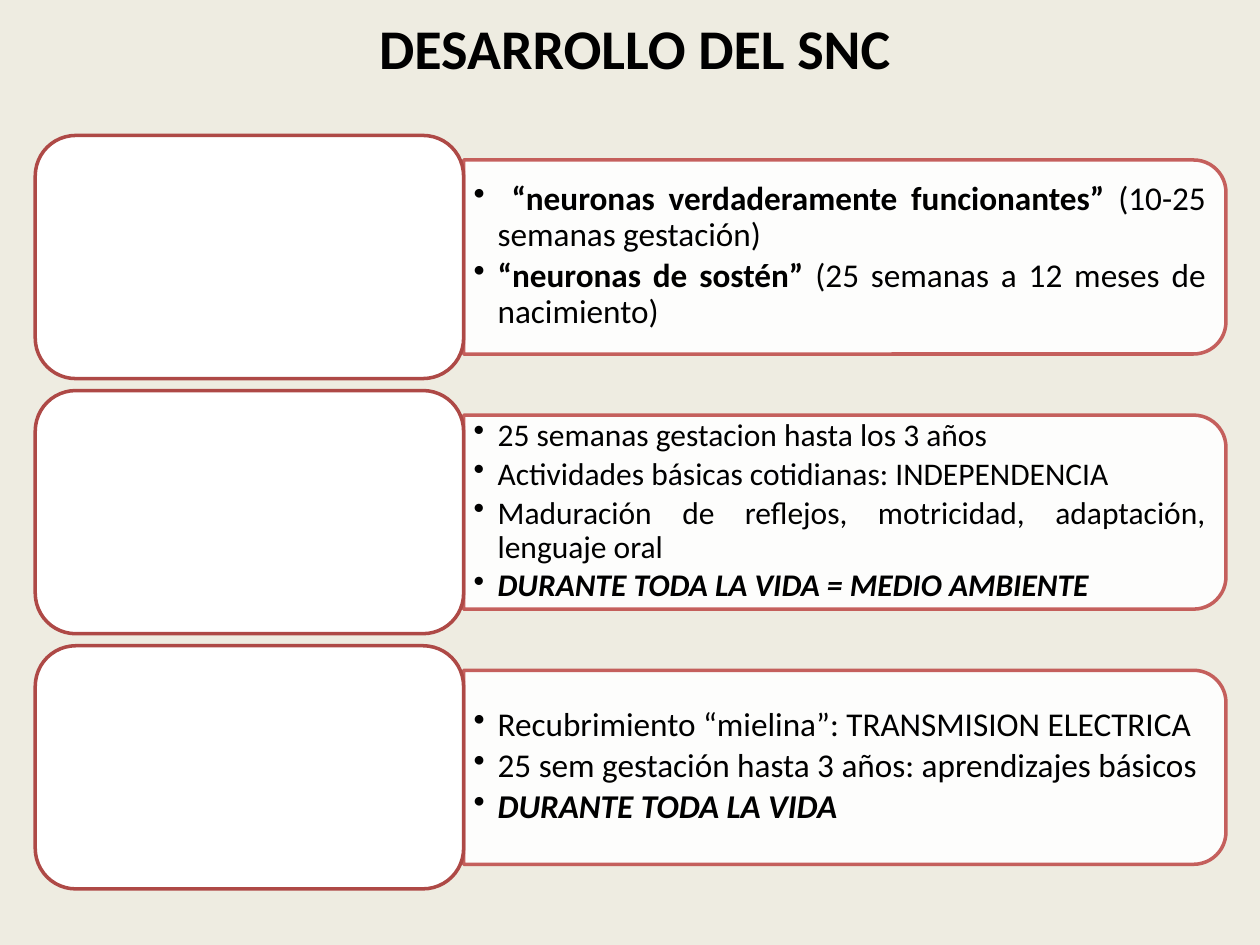
from lxml.etree import SubElement
from pptx import Presentation
from pptx.dml.color import RGBColor
from pptx.enum.shapes import MSO_SHAPE
from pptx.enum.text import MSO_ANCHOR, PP_ALIGN
from pptx.oxml.ns import qn
from pptx.util import Inches, Pt


def color(value):
    return RGBColor.from_string(value)


def add_box(kind, left, top, width, height, line_color, opacity=100):
    shape = slide.shapes.add_shape(kind, Inches(left), Inches(top), Inches(width), Inches(height))
    shape.shadow.inherit = False
    shape.fill.solid()
    shape.fill.fore_color.rgb = color("FFFFFF")
    shape.line.color.rgb = color(line_color)
    shape.line.width = Pt(2)
    if opacity < 100:
        for rgb in shape._element.spPr.iter(qn("a:srgbClr")):
            SubElement(rgb, qn("a:alpha"), val=str(opacity * 1000))
    return shape


stages = [
    (19, [
        [(" ", ""), ("“neuronas verdaderamente funcionantes”", "b"), (" (10-25 semanas gestación)", "")],
        [("“neuronas de sostén”", "b"), (" (25 semanas a 12 meses de nacimiento)", "")],
    ]),
    (18, [
        [("25 semanas gestacion hasta los 3 años", "")],
        [("Actividades básicas cotidianas: INDEPENDENCIA", "")],
        [("Maduración de reflejos, motricidad, adaptación, lenguaje oral", "")],
        [("DURANTE TODA LA VIDA = MEDIO AMBIENTE", "bi")],
    ]),
    (19, [
        [("Recubrimiento “mielina”: TRANSMISION ELECTRICA", "")],
        [("25 sem gestación hasta 3 años: aprendizajes básicos", "")],
        [("DURANTE TODA LA VIDA", "bi")],
    ]),
]

presentation = Presentation()
presentation.slide_width = Inches(10)
presentation.slide_height = Inches(7.5)
slide = presentation.slides.add_slide(presentation.slide_layouts[5])
slide.background.fill.solid()
slide.background.fill.fore_color.rgb = color("EEECE1")

title = slide.shapes.title
title.left, title.top = Inches(0.67), Inches(0.05)
title.width, title.height = Inches(8.74), Inches(0.64)
title.text_frame.text = "DESARROLLO DEL SNC"
title.text_frame.vertical_anchor = MSO_ANCHOR.MIDDLE
paragraph = title.text_frame.paragraphs[0]
paragraph.alignment = PP_ALIGN.CENTER
paragraph.font.name = "Calibri"
paragraph.font.size = Pt(32)
paragraph.font.bold = True
paragraph.font.color.rgb = color("000000")

card_left, card_width, card_height = 0.28, 3.4, 1.93
panel_left, panel_width, panel_height = card_left + card_width, 6.05, 1.54
first_middle, row_step = 2.04, 2.025

for row, (size, items) in enumerate(stages):
    middle = first_middle + row * row_step

    panel = add_box(MSO_SHAPE.ROUND_2_SAME_RECTANGLE,
                    panel_left + (panel_width - panel_height) / 2, middle - panel_width / 2,
                    panel_height, panel_width, "C0504D", 90)
    panel.rotation = 90

    text_box = slide.shapes.add_textbox(Inches(panel_left), Inches(middle - 0.7), Inches(5.97), Inches(1.39))
    frame = text_box.text_frame
    frame.word_wrap = True
    frame.vertical_anchor = MSO_ANCHOR.MIDDLE
    frame.margin_left = frame.margin_right = Inches(0.08)
    frame.margin_top = frame.margin_bottom = Inches(0.04)
    for index, item in enumerate(items):
        paragraph = frame.add_paragraph() if index else frame.paragraphs[0]
        paragraph.level = 1
        paragraph.alignment = PP_ALIGN.JUSTIFY
        paragraph.line_spacing = 0.9
        paragraph.space_after = Pt(size * 0.15)
        paragraph.font.name = "Calibri"
        paragraph.font.size = Pt(size)
        paragraph.font.color.rgb = color("000000")
        properties = paragraph._p.get_or_add_pPr()
        properties.set("marL", str(Inches(0.19)))
        properties.set("indent", str(-Inches(0.19)))
        bullet = properties.makeelement(qn("a:buChar"), {"char": "•"})
        properties.find(qn("a:defRPr")).addprevious(bullet)
        for text, style in item:
            run = paragraph.add_run()
            run.text = text
            run.font.bold = "b" in style
            run.font.italic = "i" in style

    add_box(MSO_SHAPE.ROUNDED_RECTANGLE, card_left, middle - card_height / 2,
            card_width, card_height, "AE4946")

presentation.save("out.pptx")
